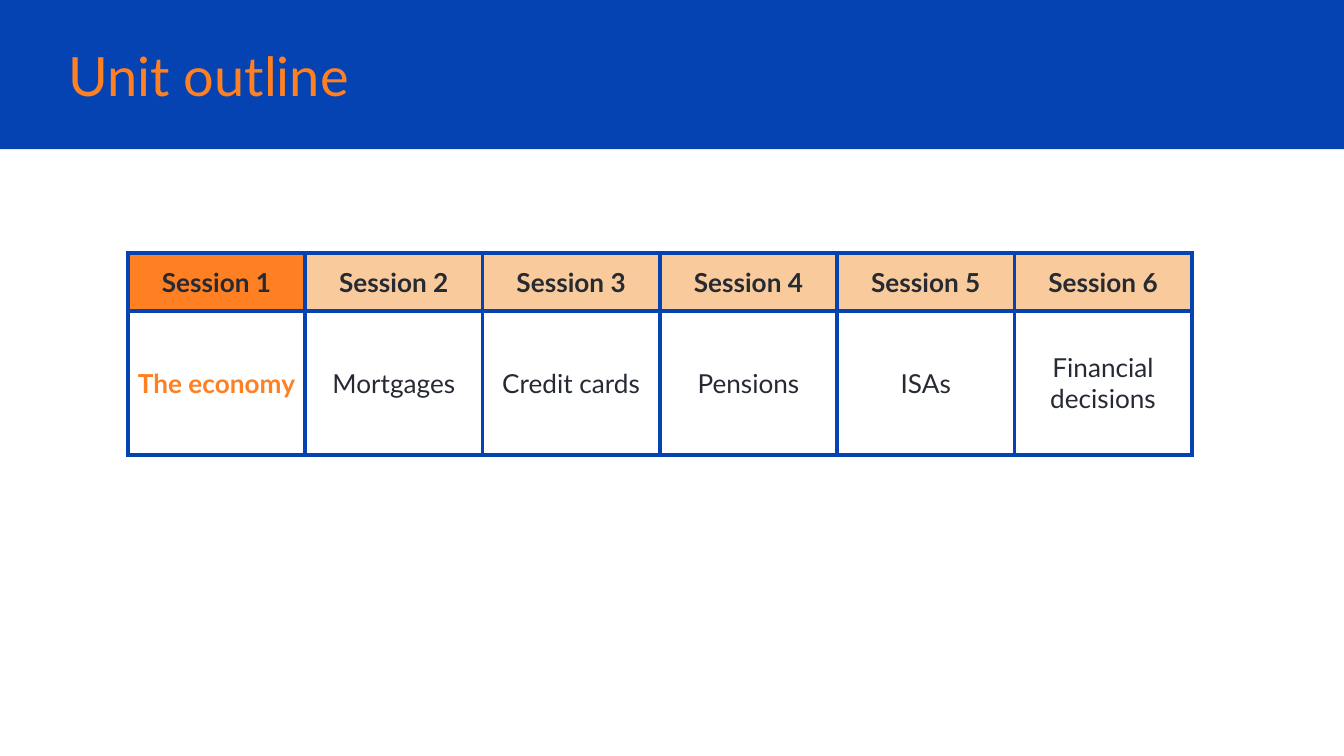
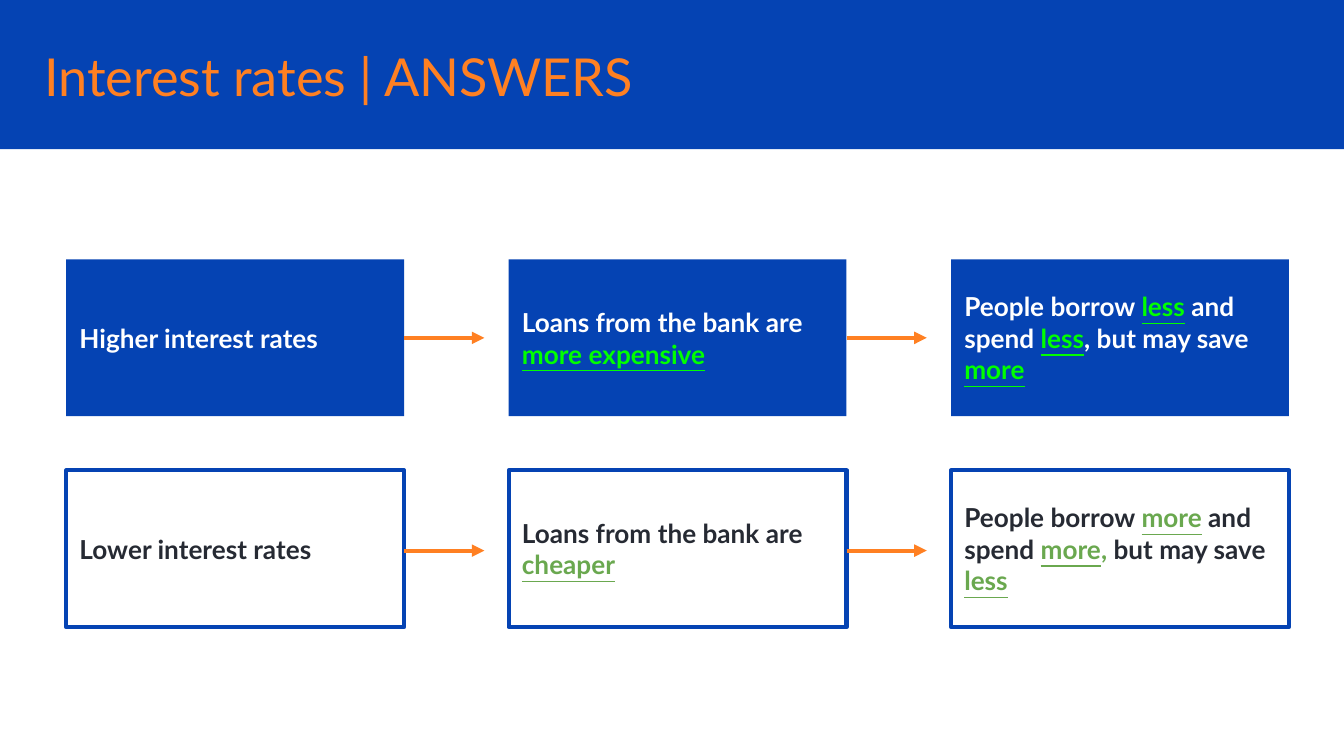
"""Build two finance lesson slides: the unit outline and the interest rate answers."""
from lxml import etree
from pptx import Presentation
from pptx.dml.color import RGBColor
from pptx.enum import shapes, text
from pptx.oxml import ns
from pptx.util import Pt

FONT = "Lato"
BODY_SIZE = 14
LINE_WIDTH = 2.25
COLOURS = {
    "blue": "0543B3",
    "orange": "FF8022",
    "peach": "F9CB9C",
    "ink": "262A33",
    "white": "FFFFFF",
    "lime": "00FF00",
    "green": "6AA84F",
}
TOPICS = ["The economy", "Mortgages", "Credit cards", "Pensions", "ISAs", "Financial decisions"]
HIGHER_RATES = [
    ["Higher interest rates"],
    ["Loans from the bank are ", ("more expensive", True)],
    ["People borrow ", ("less", True), " and spend ", ("less", True),
     ", but may save ", ("more", True)],
]
LOWER_RATES = [
    ["Lower interest rates"],
    ["Loans from the bank are ", ("cheaper", True)],
    ["People borrow ", ("more", True), " and spend ", ("more", True), (",", False),
     " but may save", (" less", True)],
]


def rgb(name):
    return RGBColor.from_string(COLOURS[name])


def format_run(run, colour, size=BODY_SIZE, bold=False, underline=False):
    font = run.font
    font.name, font.size = FONT, Pt(size)
    font.bold, font.underline = bold, underline
    font.color.rgb = rgb(colour)


def set_insets(holder, inset):
    holder.margin_left = holder.margin_right = Pt(inset)
    holder.margin_top = holder.margin_bottom = Pt(inset)
    holder.vertical_anchor = text.MSO_ANCHOR.MIDDLE


def add_rectangle(slide, left, top, width, height, fill, line=None):
    shape = slide.shapes.add_shape(
        shapes.MSO_SHAPE.RECTANGLE, Pt(left), Pt(top), Pt(width), Pt(height))
    shape.shadow.inherit = False
    shape.fill.solid()
    shape.fill.fore_color.rgb = rgb(fill)
    if line:
        shape.line.color.rgb = rgb(line)
        shape.line.width = Pt(LINE_WIDTH)
    else:
        shape.line.fill.background()
    return shape


def add_layout_band(slide):
    band = add_rectangle(slide, 0, 0, 720, 80, "blue")
    slide.slide_layout.shapes.element.insert(2, band.element)


def set_title(slide, title, left, width, size):
    shape = slide.shapes.title
    shape.left, shape.top = Pt(left), Pt(20)
    shape.width, shape.height = Pt(width), Pt(40.5)
    frame = shape.text_frame
    frame.text = title
    frame.word_wrap = True
    frame.auto_size = text.MSO_AUTO_SIZE.NONE
    set_insets(frame, 7.2)
    paragraph = frame.paragraphs[0]
    paragraph.alignment = text.PP_ALIGN.LEFT
    format_run(paragraph.runs[0], "orange", size)


def add_borders(cell):
    properties = cell._tc.get_or_add_tcPr()
    for index, side in enumerate(("lnL", "lnR", "lnT", "lnB")):
        border = etree.Element(ns.qn(f"a:{side}"), w=str(Pt(LINE_WIDTH)))
        fill = etree.SubElement(border, ns.qn("a:solidFill"))
        etree.SubElement(fill, ns.qn("a:srgbClr"), val=COLOURS["blue"])
        properties.insert(index, border)


def fill_cell(cell, words, colour, bold, inset, fill=None):
    cell.text = words
    set_insets(cell, inset)
    paragraph = cell.text_frame.paragraphs[0]
    paragraph.alignment = text.PP_ALIGN.CENTER
    format_run(paragraph.runs[0], colour, bold=bold)
    if fill:
        cell.fill.solid()
        cell.fill.fore_color.rgb = rgb(fill)
    else:
        cell.fill.background()
    add_borders(cell)


def add_session_table(slide, topics, current=0):
    column_width, row_heights = 95, (31, 77)
    table = slide.shapes.add_table(
        2, len(topics), Pt(68.5), Pt(135.5),
        Pt(column_width * len(topics)), Pt(sum(row_heights))).table
    table.first_row = table.horz_banding = False
    for row, height in zip(table.rows, row_heights):
        row.height = Pt(height)
    for index, topic in enumerate(topics):
        table.columns[index].width = Pt(column_width)
        active = index == current
        fill_cell(table.cell(0, index), f"Session {index + 1}", "ink", True, 7.2,
                  "orange" if active else "peach")
        fill_cell(table.cell(1, index), topic, "orange" if active else "ink", active, 5)


def write_pieces(shape, pieces, colour, accent):
    frame = shape.text_frame
    frame.word_wrap = True
    set_insets(frame, 7.2)
    paragraph = frame.paragraphs[0]
    paragraph.alignment = text.PP_ALIGN.LEFT
    for piece in pieces:
        plain = isinstance(piece, str)
        words, underline = (piece, False) if plain else piece
        run = paragraph.add_run()
        run.text = words
        format_run(run, colour if plain else accent, bold=True, underline=underline)


def add_arrow(slide, left, top, length):
    arrow = slide.shapes.add_connector(
        shapes.MSO_CONNECTOR.STRAIGHT, Pt(left), Pt(top), Pt(left + length), Pt(top))
    arrow.line.color.rgb = rgb("orange")
    arrow.line.width = Pt(LINE_WIDTH)
    etree.SubElement(arrow.line._get_or_add_ln(), ns.qn("a:tailEnd"), type="triangle")
    etree.SubElement(arrow.element.spPr, ns.qn("a:effectLst"))


def add_chain(slide, steps, top, arrow_top, fill, line, colour, accent):
    first_left, pitch, width, height = 35.5, 237, 181, 84
    for index, pieces in enumerate(steps):
        left = first_left + index * pitch
        box = add_rectangle(slide, left, top, width, height, fill, line)
        write_pieces(box, pieces, colour, accent)
        if index < len(steps) - 1:
            add_arrow(slide, left + width, arrow_top, 43)


def main():
    presentation = Presentation()
    presentation.slide_width, presentation.slide_height = Pt(720), Pt(405)
    layout = presentation.slide_layouts[5]

    outline = presentation.slides.add_slide(layout)
    add_layout_band(outline)
    set_title(outline, "Unit outline", 29.5, 609, 29)
    add_session_table(outline, TOPICS)

    answers = presentation.slides.add_slide(layout)
    set_title(answers, "Interest rates | ANSWERS", 16.5, 629, 28)
    add_chain(answers, HIGHER_RATES, 139, 181, "blue", None, "white", "lime")
    add_chain(answers, LOWER_RATES, 252, 295, "white", "blue", "ink", "green")

    presentation.save("out.pptx")


if __name__ == "__main__":
    main()
